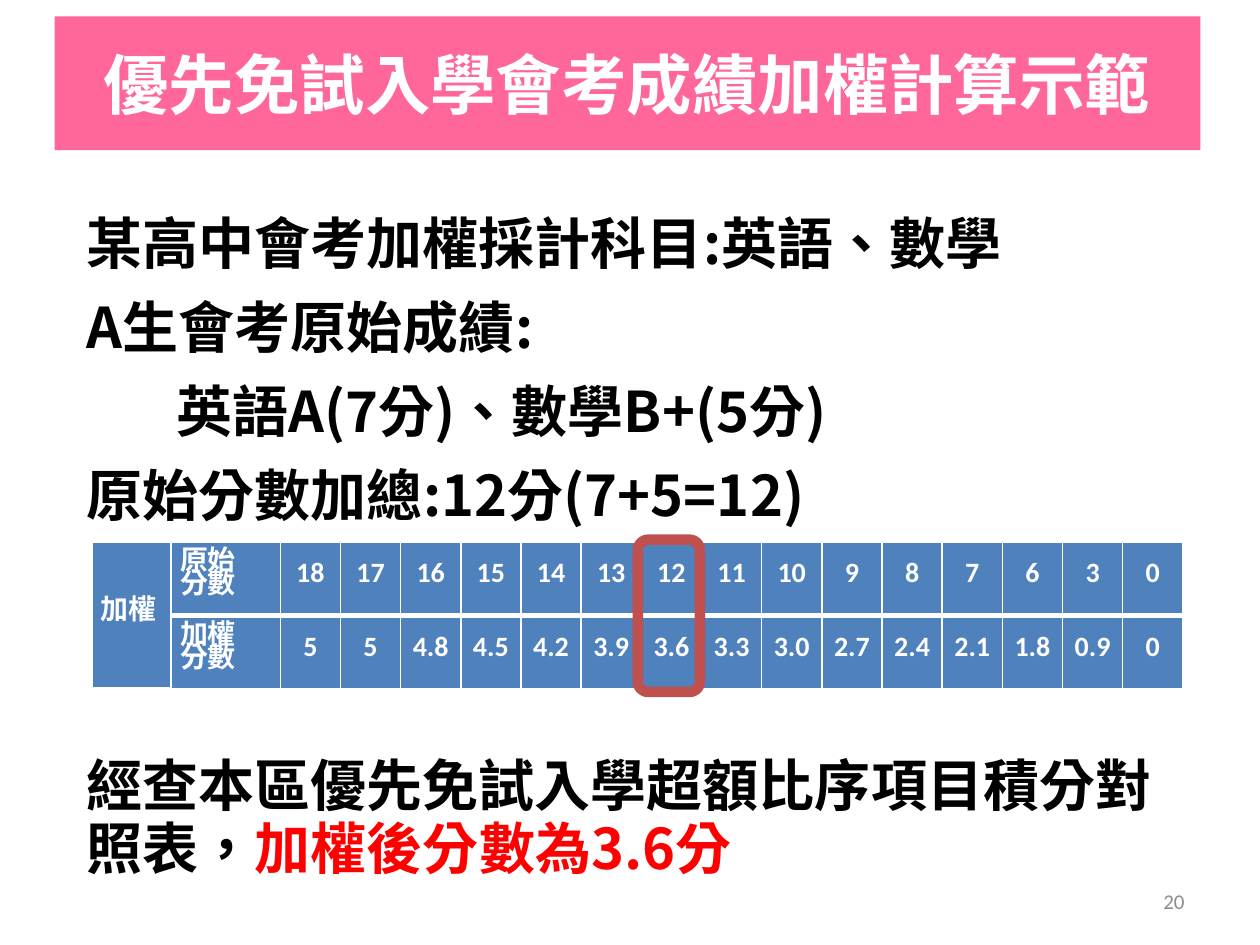
from lxml.etree import SubElement
from pptx import Presentation
from pptx.dml.color import RGBColor
from pptx.enum.shapes import MSO_SHAPE
from pptx.enum.text import MSO_ANCHOR, PP_ALIGN
from pptx.oxml import parse_xml
from pptx.oxml.ns import nsdecls, qn
from pptx.util import Cm, Pt

COLORS = {
    "banner": "FF6699",
    "white": "FFFFFF",
    "black": "000000",
    "answer": "FF0000",
    "cell": "4F81BD",
    "highlight": "C0504D",
    "number": "8C8C8C",
}
CJK_FONT = "Noto Sans CJK SC"
LATIN_FONT = "Calibri"

ORIGINAL_SCORES = ["18", "17", "16", "15", "14", "13", "12", "11",
                   "10", "9", "8", "7", "6", "3", "0"]
WEIGHTED_SCORES = ["5", "5", "4.8", "4.5", "4.2", "3.9", "3.6", "3.3",
                   "3.0", "2.7", "2.4", "2.1", "1.8", "0.9", "0"]
TABLE_LEFT, TABLE_TOP, ROW_HEIGHT = 1.85, 10.93, 1.48
LABEL_WIDTHS = [1.6, 2.2]
SCORE_WIDTH = 18.2 / len(ORIGINAL_SCORES)


def color(name):
    return RGBColor.from_string(COLORS[name])


class SlideBuilder:
    def __init__(self, slide):
        self.slide = slide

    def add_run(self, paragraph, text, size, color_name, font=CJK_FONT, bold=True):
        run = paragraph.add_run()
        run.text = text
        run.font.size = Pt(size)
        run.font.bold = bold
        run.font.name = font
        run.font.color.rgb = color(color_name)
        properties = run._r.get_or_add_rPr()
        properties.set("lang", "zh-TW")
        SubElement(properties, qn("a:ea")).set("typeface", CJK_FONT)

    def add_banner(self, box, text):
        shape = self.slide.shapes.add_shape(MSO_SHAPE.RECTANGLE, *map(Cm, box))
        shape.shadow.inherit = False
        shape.fill.solid()
        shape.fill.fore_color.rgb = color("banner")
        shape.line.fill.background()
        shape.text_frame.word_wrap = True
        shape.text_frame.vertical_anchor = MSO_ANCHOR.MIDDLE
        paragraph = shape.text_frame.paragraphs[0]
        paragraph.alignment = PP_ALIGN.CENTER
        self.add_run(paragraph, text, 37.4, "white")

    def add_text_box(self, box, anchor=MSO_ANCHOR.TOP):
        frame = self.slide.shapes.add_textbox(*map(Cm, box)).text_frame
        frame.word_wrap = True
        frame.vertical_anchor = anchor
        return frame

    def add_body(self, box, lines):
        frame = self.add_text_box(box)
        for index, (runs, spacing, before, indent) in enumerate(lines):
            paragraph = frame.add_paragraph() if index else frame.paragraphs[0]
            paragraph.line_spacing = Pt(spacing)
            paragraph.space_before = Pt(before)
            if indent:
                paragraph._p.get_or_add_pPr().set("marL", str(Cm(indent)))
            for text, color_name in runs:
                self.add_run(paragraph, text, 32, color_name)

    def add_slide_number(self, box, text):
        paragraph = self.add_text_box(box, MSO_ANCHOR.MIDDLE).paragraphs[0]
        paragraph.alignment = PP_ALIGN.RIGHT
        self.add_run(paragraph, text, 12, "number", LATIN_FONT, False)

    def style_cell(self, cell, top, bottom):
        cell.fill.solid()
        cell.fill.fore_color.rgb = color("cell")
        properties = cell._tc.get_or_add_tcPr()
        borders = {"lnL": 1, "lnR": 1, "lnT": top, "lnB": bottom}
        for index, (tag, width) in enumerate(borders.items()):
            properties.insert(index, parse_xml(
                f'<a:{tag} {nsdecls("a")} w="{Pt(width)}"><a:solidFill>'
                f'<a:srgbClr val="{COLORS["white"]}"/></a:solidFill></a:{tag}>'))

    def fill_cell(self, cell, lines, margin, alignment):
        cell.vertical_anchor = MSO_ANCHOR.MIDDLE
        cell.margin_left = cell.margin_right = Cm(margin)
        cell.margin_top = cell.margin_bottom = 0
        for index, text in enumerate(lines):
            frame = cell.text_frame
            paragraph = frame.add_paragraph() if index else frame.paragraphs[0]
            paragraph.alignment = alignment
            paragraph.line_spacing = Pt(13)
            self.add_run(paragraph, text, 16, "white", LATIN_FONT)

    def add_score_table(self, corner_label, rows):
        widths = LABEL_WIDTHS + [SCORE_WIDTH] * len(ORIGINAL_SCORES)
        table = self.slide.shapes.add_table(
            len(rows), len(widths), Cm(TABLE_LEFT), Cm(TABLE_TOP),
            Cm(sum(widths)), Cm(ROW_HEIGHT * len(rows))).table
        for column, width in zip(table.columns, widths):
            column.width = Cm(width)
        for row_index, (label, scores) in enumerate(rows):
            table.rows[row_index].height = Cm(ROW_HEIGHT)
            top, bottom = (3, 1) if row_index else (1, 3)
            for column_index in range(len(widths)):
                self.style_cell(table.cell(row_index, column_index), top, bottom)
            self.fill_cell(table.cell(row_index, 1), label, 0.18, PP_ALIGN.LEFT)
            for column_index, score in enumerate(scores, start=2):
                self.fill_cell(table.cell(row_index, column_index), [score], 0, PP_ALIGN.CENTER)
        corner = table.cell(0, 0)
        corner.merge(table.cell(len(rows) - 1, 0))
        self.fill_cell(corner, [corner_label], 0.18, PP_ALIGN.LEFT)

    def add_highlight(self, box):
        shape = self.slide.shapes.add_shape(MSO_SHAPE.ROUNDED_RECTANGLE, *map(Cm, box))
        shape.shadow.inherit = False
        shape.fill.background()
        shape.line.color.rgb = color("highlight")
        shape.line.width = Pt(6)


def main():
    presentation = Presentation()
    presentation.slide_width = Cm(25.4)
    presentation.slide_height = Cm(19.05)
    builder = SlideBuilder(presentation.slides.add_slide(presentation.slide_layouts[6]))

    builder.add_banner((1.1, 0.33, 23.1, 2.7), "優先免試入學會考成績加權計算示範")
    builder.add_slide_number((18.2, 17.66, 5.93, 1.01), "20")
    builder.add_body((1.5, 4.58, 22.7, 13.43), [
        ([("某高中會考加權採計科目:英語、數學", "black")], 24, 0, 0),
        ([("A生會考原始成績:", "black")], 24, 24, 0),
        ([("英語A(7分)、數學B+(5分)", "black")], 24, 24, 1.8),
        ([("原始分數加總:12分(7+5=12)", "black")], 24, 24, 0),
        ([("經查本區優先免試入學超額比序項目積分對照表，", "black"),
          ("加權後分數為3.6分", "answer")], 36, 130, 0),
    ])
    builder.add_score_table("加權", [
        (["原始", "分數"], ORIGINAL_SCORES),
        (["加權", "分數"], WEIGHTED_SCORES),
    ])
    builder.add_highlight((12.86, 10.88, 1.25, 3.07))

    presentation.save("out.pptx")


if __name__ == "__main__":
    main()
